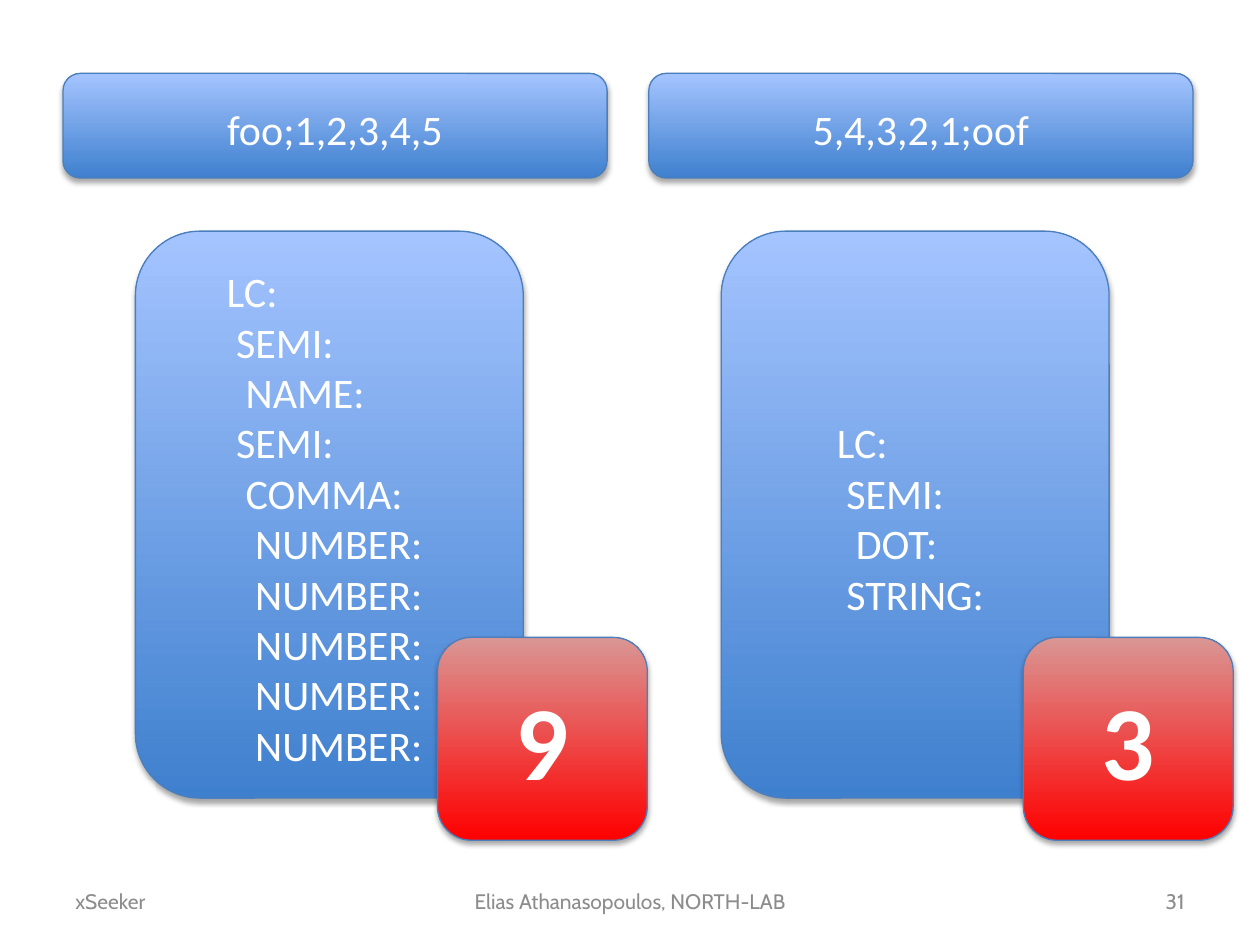
"""Build a slide comparing the parse trees of two reversed code snippets."""
from dataclasses import dataclass

from lxml.etree import SubElement
from pptx import Presentation
from pptx.dml.color import RGBColor
from pptx.enum.shapes import MSO_SHAPE
from pptx.enum.text import MSO_ANCHOR, PP_ALIGN
from pptx.oxml.ns import qn
from pptx.util import Cm, Pt

SNIPPETS = [
    {
        "left": 1.27,
        "code": "foo;1,2,3,4,5",
        "tree": [(0, "LC:"), (1, "SEMI:"), (2, "NAME:"), (1, "SEMI:"), (2, "COMMA:")]
        + [(3, "NUMBER:")] * 5,
        "tree_margin": 1.46,
        "score": "9",
    },
    {
        "left": 13.08,
        "code": "5,4,3,2,1;oof",
        "tree": [(0, "LC:"), (1, "SEMI:"), (2, "DOT:"), (1, "STRING:")],
        "tree_margin": 1.95,
        "score": "3",
    },
]
FOOTERS = [
    ("xSeeker", 1.27, 5.93, PP_ALIGN.LEFT),
    ("Elias Athanasopoulos, NORTH-LAB", 8.68, 8.05, PP_ALIGN.CENTER),
    ("31", 18.2, 5.93, PP_ALIGN.RIGHT),
]
CODE_BOX = (0, 1.48, 10.97, 2.11)
TREE_BOX = (1.46, 4.66, 7.82, 11.43)
SCORE_BOX = (7.55, 12.85, 4.23, 4.09)
INDENT = Pt(5.42)


@dataclass(frozen=True)
class Theme:
    body_font: str = "Calibri"
    footer_font: str = "Cabin"
    text: str = "FFFFFF"
    footer: str = "8C8C8C"
    outline: str = "4B7EBC"
    shadow: str = "000000"
    blue: tuple = ("3F80CE", "A4C4FF")
    red: tuple = ("FF0000", "D99694")
    body_size: int = 24
    score_size: int = 60
    footer_size: int = 12


THEME = Theme()


def style_font(font, name, size, color, bold=False):
    font.name = name
    font.size = Pt(size)
    font.bold = bold
    font.color.rgb = RGBColor.from_string(color)


def add_soft_shadow(shape):
    shape.shadow.inherit = False
    effects = shape._element.spPr.find(qn("a:effectLst"))
    shadow = SubElement(effects, qn("a:outerShdw"), blurRad="40000", dist="23000",
                        dir="5400000", rotWithShape="0")
    color = SubElement(shadow, qn("a:srgbClr"), val=THEME.shadow)
    SubElement(color, qn("a:alpha"), val="35000")


def add_card(slide, column_left, box, colors):
    left, top, width, height = box
    shape = slide.shapes.add_shape(MSO_SHAPE.ROUNDED_RECTANGLE, Cm(column_left + left),
                                   Cm(top), Cm(width), Cm(height))
    shape.fill.gradient()
    shape.fill.gradient_angle = 90
    for position, (stop, color) in enumerate(zip(shape.fill.gradient_stops, colors)):
        stop.position = position
        stop.color.rgb = RGBColor.from_string(color)
    shape.line.color.rgb = RGBColor.from_string(THEME.outline)
    shape.line.width = Pt(0.75)
    add_soft_shadow(shape)
    frame = shape.text_frame
    frame.word_wrap = True
    frame.vertical_anchor = MSO_ANCHOR.MIDDLE
    return frame


def add_label(frame, text, size, bold=False):
    paragraph = frame.paragraphs[0]
    paragraph.text = text
    paragraph.alignment = PP_ALIGN.CENTER
    style_font(paragraph.font, THEME.body_font, size, THEME.text, bold)


def add_tree(frame, nodes, margin):
    frame.margin_left = Cm(margin)
    for index, (level, text) in enumerate(nodes):
        paragraph = frame.add_paragraph() if index else frame.paragraphs[0]
        paragraph.text = text
        paragraph.alignment = PP_ALIGN.LEFT
        paragraph._p.get_or_add_pPr().set("marL", str(level * INDENT))
        style_font(paragraph.font, THEME.body_font, THEME.body_size, THEME.text)


def add_footer(slide, text, left, width, alignment):
    frame = slide.shapes.add_textbox(Cm(left), Cm(17.65), Cm(width), Cm(1.02)).text_frame
    frame.word_wrap = True
    frame.vertical_anchor = MSO_ANCHOR.MIDDLE
    paragraph = frame.paragraphs[0]
    paragraph.text = text
    paragraph.alignment = alignment
    style_font(paragraph.font, THEME.footer_font, THEME.footer_size, THEME.footer)


def main():
    presentation = Presentation()
    presentation.slide_width, presentation.slide_height = Cm(25.4), Cm(19.05)
    slide = presentation.slides.add_slide(presentation.slide_layouts[6])
    for footer in FOOTERS:
        add_footer(slide, *footer)
    for snippet in SNIPPETS:
        left = snippet["left"]
        code = add_card(slide, left, CODE_BOX, THEME.blue)
        tree = add_card(slide, left, TREE_BOX, THEME.blue)
        score = add_card(slide, left, SCORE_BOX, THEME.red)
        code.margin_top = tree.margin_top = Cm(0.25)
        add_label(code, snippet["code"], THEME.body_size)
        add_tree(tree, snippet["tree"], snippet["tree_margin"])
        add_label(score, snippet["score"], THEME.score_size, bold=True)
    presentation.save("out.pptx")


if __name__ == "__main__":
    main()
